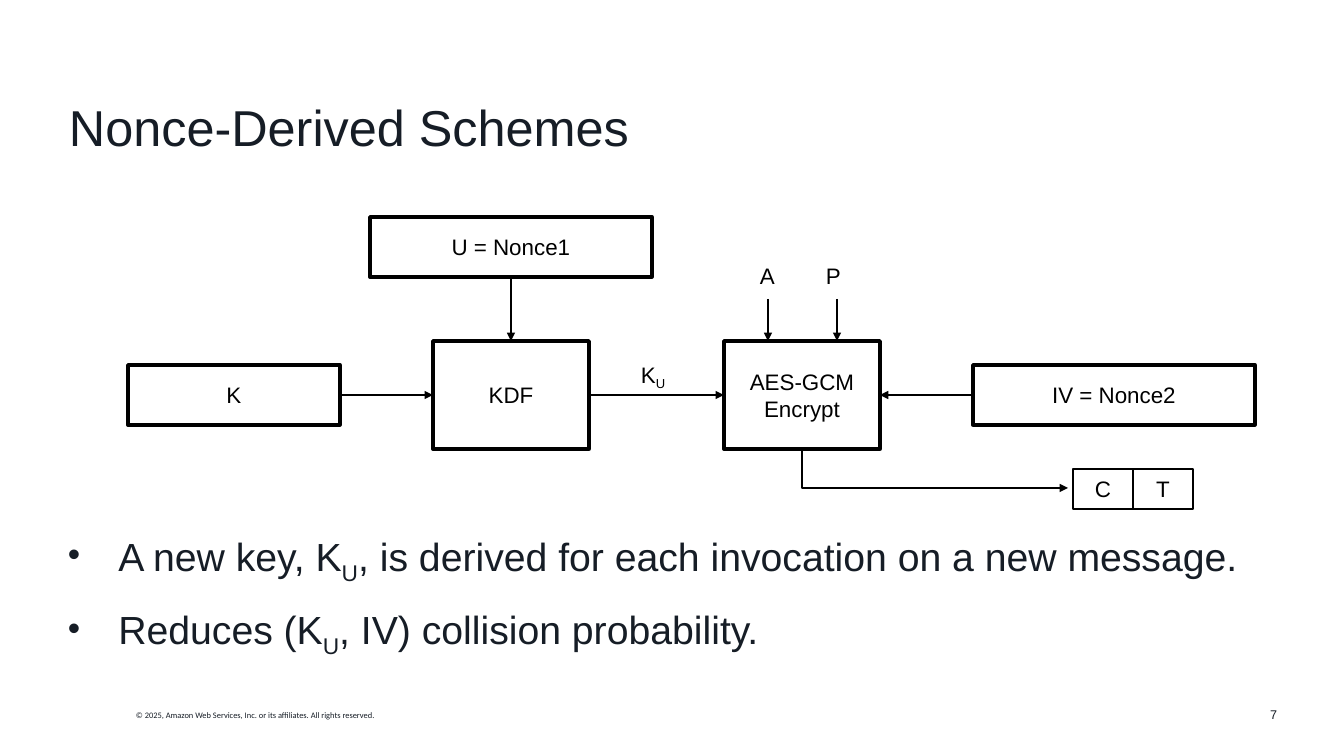
from lxml import etree
from pptx import Presentation
from pptx.dml.color import RGBColor
from pptx.enum.shapes import MSO_CONNECTOR, MSO_SHAPE
from pptx.enum.text import MSO_ANCHOR, PP_ALIGN
from pptx.oxml.ns import qn
from pptx.util import Emu, Pt

PX = 914400 / 100.8
INK = RGBColor(0x16, 0x1D, 0x26)
BLACK = RGBColor(0, 0, 0)
RECTANGLE = MSO_SHAPE.RECTANGLE
STRAIGHT, ELBOW = MSO_CONNECTOR.STRAIGHT, MSO_CONNECTOR.ELBOW
LEFT, CENTER, RIGHT = PP_ALIGN.LEFT, PP_ALIGN.CENTER, PP_ALIGN.RIGHT
TOP, MIDDLE = MSO_ANCHOR.TOP, MSO_ANCHOR.MIDDLE
SIDE_TOP, SIDE_LEFT, SIDE_BOTTOM, SIDE_RIGHT = range(4)

deck = Presentation()
deck.slide_width, deck.slide_height = Emu(round(1344 * PX)), Emu(round(756 * PX))
slide = deck.slides.add_slide(deck.slide_layouts[6])


def px(*lengths):
    return [Emu(round(length * PX)) for length in lengths]


def write(text, at, size=16, color=BLACK, font="Arial", align=LEFT, anchor=TOP,
          wrap=True, border=None, bullets=False, spacing=None):
    """Write text in a plain or bordered box; ~x~ is a subscript, | a line break."""
    if border:
        box = slide.shapes.add_shape(RECTANGLE, *px(*at))
        box.shadow.inherit = False
        box.fill.background()
        box.line.color.rgb = BLACK
        box.line.width = Pt(border)
    else:
        box = slide.shapes.add_textbox(*px(*at))
    frame = box.text_frame
    frame.word_wrap = wrap
    frame.vertical_anchor = anchor
    if bullets:
        frame.margin_left = frame.margin_right = 0
    for number, line in enumerate(text.split("\n")):
        paragraph = frame.add_paragraph() if number else frame.paragraphs[0]
        paragraph.alignment = align
        if spacing:
            paragraph.line_spacing = spacing
        if bullets:
            paragraph.space_after = Pt(18)
            properties = paragraph._p.get_or_add_pPr()
            properties.set("marL", "457200")
            properties.set("indent", "-457200")
            etree.SubElement(properties, qn("a:buSzPct")).set("val", "90000")
            etree.SubElement(properties, qn("a:buFont")).set("typeface", "Arial")
            etree.SubElement(properties, qn("a:buChar")).set("char", "•")
        for part, piece in enumerate(line.split("~")):
            for row, words in enumerate(piece.split("|")):
                if row:
                    paragraph.add_line_break()
                if not words:
                    continue
                run = paragraph.add_run()
                run.text = words
                run.font.size = Pt(size)
                run.font.name = font
                run.font.color.rgb = color
                if part % 2:
                    run.font._element.set("baseline", "-25000")
    return box


def arrow(kind, *ends):
    connector = slide.shapes.add_connector(kind, *px(*ends))
    connector.line.color.rgb = BLACK
    connector.line.width = Pt(1.5)
    line = connector.line._get_or_add_ln()
    etree.SubElement(line, qn("a:tailEnd")).set("type", "triangle")
    etree.SubElement(connector._element.spPr, qn("a:effectLst"))
    return connector


# Title and footer
write("Nonce-Derived Schemes", (59, 101, 1210, 59), size=36, color=INK,
      anchor=MIDDLE, spacing=0.9)
write("© 2025, Amazon Web Services, Inc. or its affiliates. All rights reserved.",
      (126, 705, 290, 20), size=6, color=INK, font="Calibri", wrap=False)
write("7", (985, 694, 302, 40), size=9, color=INK, align=RIGHT, anchor=MIDDLE)

# Key points
write("A new key, K~U~, is derived for each invocation on a new message.\n"
      "Reduces (K~U~, IV) collision probability.",
      (68, 528, 1210, 121), size=28, color=INK, bullets=True, spacing=0.9)

# Inputs, key derivation and encryption
key, nonce1, kdf, encrypt, nonce2 = [
    write(text, at, align=CENTER, anchor=MIDDLE, border=2.5)
    for text, at in [
        ("K", (128, 365, 212, 60)),
        ("U = Nonce1", (370, 217, 282, 60)),
        ("KDF", (433, 341, 156, 108)),
        ("AES-GCM|Encrypt", (724, 341, 156, 108)),
        ("IV = Nonce2", (973, 365, 282, 60)),
    ]
]

# Flow between the boxes
for source, source_side, target, target_side in [
    (key, SIDE_RIGHT, kdf, SIDE_LEFT),
    (nonce1, SIDE_BOTTOM, kdf, SIDE_TOP),
    (kdf, SIDE_RIGHT, encrypt, SIDE_LEFT),
    (nonce2, SIDE_LEFT, encrypt, SIDE_RIGHT),
]:
    flow = arrow(STRAIGHT, 0, 0, 0, 0)
    flow.begin_connect(source, source_side)
    flow.end_connect(target, target_side)
write("K~U~", (631, 356, 46, 37), wrap=False)

# Associated data and plaintext
for letter, label_left, arrow_x in [("A", 750, 768), ("P", 816, 837)]:
    write(letter, (label_left, 257, 35, 37), wrap=False)
    arrow(STRAIGHT, arrow_x, 299, arrow_x, 341)

# Output: one bend, down and then right, as a turned and mirrored connector
output = arrow(ELBOW, 916, 336, 954, 602)
output._element.spPr.find(qn("a:prstGeom")).set("prst", "bentConnector2")
turn = output._element.spPr.find(qn("a:xfrm"))
turn.set("rot", "16200000")
turn.set("flipH", "1")

# Ciphertext and tag
for column, letter in enumerate("CT"):
    write(letter, (1073 + 60 * column, 469, 60, 40), align=CENTER, anchor=MIDDLE,
          border=1)

deck.save("out.pptx")
